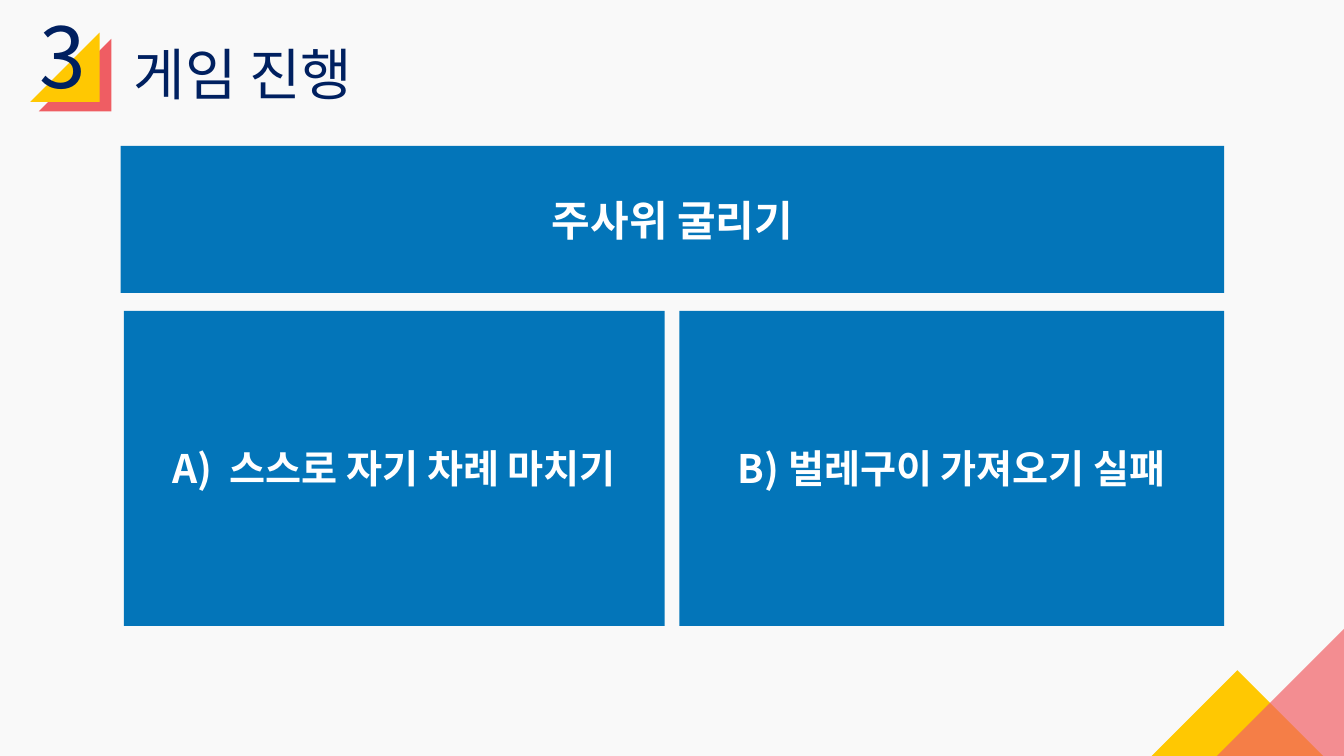
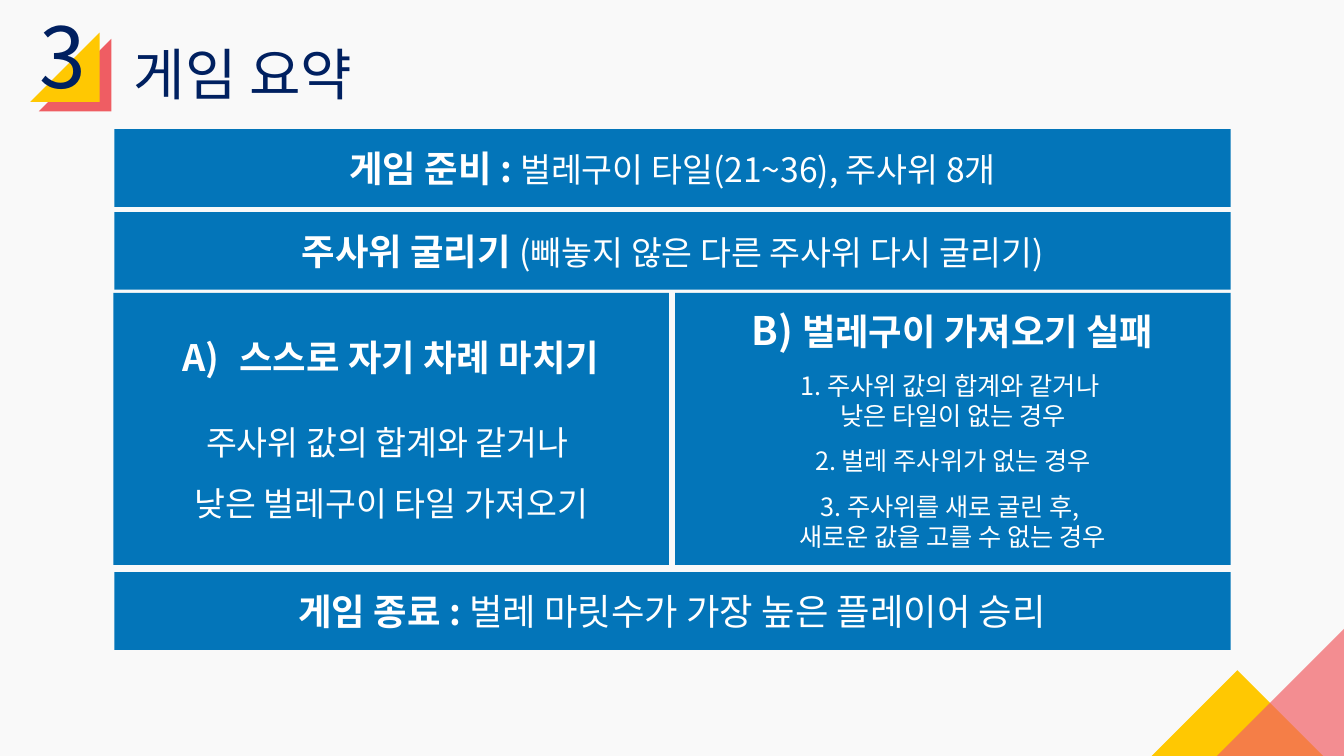
from dataclasses import dataclass

from lxml import etree
from pptx import Presentation
from pptx.dml.color import RGBColor
from pptx.enum.shapes import MSO_SHAPE
from pptx.enum.text import MSO_ANCHOR, MSO_AUTO_SIZE, PP_ALIGN
from pptx.oxml.ns import qn
from pptx.util import Emu, Pt

RECTANGLE = MSO_SHAPE.RECTANGLE
RIGHT_TRIANGLE = MSO_SHAPE.RIGHT_TRIANGLE
TOP, MIDDLE = MSO_ANCHOR.TOP, MSO_ANCHOR.MIDDLE
LEFT, CENTER = PP_ALIGN.LEFT, PP_ALIGN.CENTER
FIXED_SIZE = MSO_AUTO_SIZE.NONE

EMU_PER_PX = 9525
SLIDE_WIDTH, SLIDE_HEIGHT = 1280, 720
TITLE_ONLY_LAYOUT = 5
FONT = "Noto Sans CJK KR"
PAPER, NAVY, BLUE, WHITE = "F9F9F9", "002060", "0375B9", "FFFFFF"
YELLOW, RED, CORAL = "FFC802", "EB1C24", "F16065"


@dataclass(frozen=True)
class Box:
    left: int
    top: int
    width: int
    height: int


@dataclass(frozen=True)
class Triangle:
    box: Box
    rotation: int
    color: str
    opacity: int = 100


@dataclass(frozen=True)
class Span:
    text: str
    size: int
    bold: bool = False
    color: str = WHITE


@dataclass(frozen=True)
class Line:
    spans: tuple[Span, ...]
    spacing: float | None = None
    space_before: int = 0
    lettered: bool = False


@dataclass(frozen=True)
class Panel:
    box: Box
    lines: tuple[Line, ...]


NUMBER_BOX = Box(28, 0, 90, 107)
TITLE_BOX = Box(118, 33, 663, 74)
TRIANGLES = (
    Triangle(Box(37, 37, 69, 69), 270, RED, 70),
    Triangle(Box(29, 31, 66, 66), 270, YELLOW),
    Triangle(Box(1119, 663, 119, 119), 135, YELLOW),
    Triangle(Box(1156, 599, 124, 124), 270, CORAL, 70),
)


def px(length: int) -> Emu:
    return Emu(length * EMU_PER_PX)


def rgb(color: str) -> RGBColor:
    return RGBColor.from_string(color)


def place(box: Box) -> tuple[Emu, Emu, Emu, Emu]:
    return px(box.left), px(box.top), px(box.width), px(box.height)


def add_filled_shape(slide, kind, box: Box, color: str, opacity: int = 100):
    shape = slide.shapes.add_shape(kind, *place(box))
    shape.shadow.inherit = False
    shape.fill.solid()
    shape.fill.fore_color.rgb = rgb(color)
    shape.line.fill.background()
    if opacity < 100:
        color_element = shape.element.spPr.find(".//" + qn("a:srgbClr"))
        etree.SubElement(color_element, qn("a:alpha"), val=str(opacity * 1000))
    return shape


def add_letter_bullet(paragraph) -> None:
    properties = paragraph._p.get_or_add_pPr()
    indent = px(54)
    properties.set("marL", str(indent))
    properties.set("indent", str(-indent))
    etree.SubElement(properties, qn("a:buFont"), typeface=FONT)
    etree.SubElement(properties, qn("a:buAutoNum"), type="alphaUcParenR")


def write_lines(text_frame, lines: tuple[Line, ...], alignment, anchor) -> None:
    text_frame.word_wrap = True
    text_frame.auto_size = FIXED_SIZE
    text_frame.vertical_anchor = anchor
    for index, line in enumerate(lines):
        paragraph = text_frame.add_paragraph() if index else text_frame.paragraphs[0]
        paragraph.alignment = alignment
        if line.spacing:
            paragraph.line_spacing = line.spacing
        if line.space_before:
            paragraph.space_before = Pt(line.space_before)
        if line.lettered:
            add_letter_bullet(paragraph)
        for span in line.spans:
            run = paragraph.add_run()
            run.text = span.text
            run.font.size = Pt(span.size)
            run.font.bold = span.bold
            run.font.color.rgb = rgb(span.color)
            run.font.name = FONT
            etree.SubElement(run._r.get_or_add_rPr(), qn("a:ea"), typeface=FONT)


def decorate_layout(layout, slide) -> None:
    """Give the layout its background and corner triangles."""
    layout.background.fill.solid()
    layout.background.fill.fore_color.rgb = rgb(PAPER)
    for triangle in TRIANGLES:
        shape = add_filled_shape(
            slide, RIGHT_TRIANGLE, triangle.box, triangle.color, triangle.opacity
        )
        shape.rotation = triangle.rotation
        layout.shapes.element.append(shape.element)


def add_heading(slide, number: str, title: str) -> None:
    number_box = slide.shapes.add_textbox(*place(NUMBER_BOX))
    number_line = Line((Span(number, 60, color=NAVY),))
    write_lines(number_box.text_frame, (number_line,), LEFT, TOP)

    title_shape = slide.shapes.title
    title_shape.left, title_shape.top, title_shape.width, title_shape.height = place(TITLE_BOX)
    title_line = Line((Span(title, 40, color=NAVY),))
    write_lines(title_shape.text_frame, (title_line,), LEFT, TOP)


def add_panel(slide, panel: Panel) -> None:
    shape = add_filled_shape(slide, RECTANGLE, panel.box, BLUE)
    write_lines(shape.text_frame, panel.lines, CENTER, MIDDLE)


def bar(top: int, *spans: Span) -> Panel:
    return Panel(Box(109, top, 1063, 74), (Line(spans),))


# Slide contents
PROGRESS_PANELS = (
    Panel(Box(115, 139, 1051, 140), (Line((Span("주사위 굴리기", 30, True),)),)),
    Panel(
        Box(118, 296, 515, 300),
        (Line((Span("스스로 자기 차례 마치기", 28, True),), lettered=True),),
    ),
    Panel(
        Box(647, 296, 519, 300),
        (Line((Span("B) 벌레구이 가져오기 실패", 28, True),)),),
    ),
)
SUMMARY_PANELS = (
    bar(123, Span("게임 준비 : ", 26, True), Span("벌레구이 타일(21~36), 주사위 8개", 24)),
    bar(202, Span("주사위 굴리기 ", 26, True), Span("(빼놓지 않은 다른 주사위 다시 굴리기)", 24)),
    Panel(
        Box(108, 279, 529, 259),
        (
            Line((Span("스스로 자기 차례 마치기", 26, True),), lettered=True),
            Line((Span("주사위 값의 합계와 같거나 ", 24),), space_before=31),
            Line((Span("낮은 벌레구이 타일 가져오기", 24),), spacing=1.5),
        ),
    ),
    Panel(
        Box(643, 279, 529, 259),
        (
            Line((Span("B) ", 28, True), Span("벌레구이 가져오기 실패", 26, True))),
            Line((Span("1. 주사위 값의 합계와 같거나 ", 18),), space_before=12),
            Line((Span("낮은 타일이 없는 경우", 18),)),
            Line((Span("2. 벌레 주사위가 없는 경우", 18),), spacing=1.5),
            Line((Span("3. 주사위를 새로 굴린 후, ", 18),), spacing=1.5),
            Line((Span("새로운 값을 고를 수 없는 경우", 18),)),
        ),
    ),
    bar(545, Span("게임 종료 : ", 26, True), Span("벌레 마릿수가 가장 높은 플레이어 승리", 26)),
)
SLIDES = (("게임 진행", PROGRESS_PANELS), ("게임 요약", SUMMARY_PANELS))


def main() -> None:
    presentation = Presentation()
    presentation.slide_width = px(SLIDE_WIDTH)
    presentation.slide_height = px(SLIDE_HEIGHT)
    layout = presentation.slide_layouts[TITLE_ONLY_LAYOUT]
    for index, (title, panels) in enumerate(SLIDES):
        slide = presentation.slides.add_slide(layout)
        if index == 0:
            decorate_layout(layout, slide)
        add_heading(slide, "3", title)
        for panel in panels:
            add_panel(slide, panel)
    presentation.save("out.pptx")


if __name__ == "__main__":
    main()
